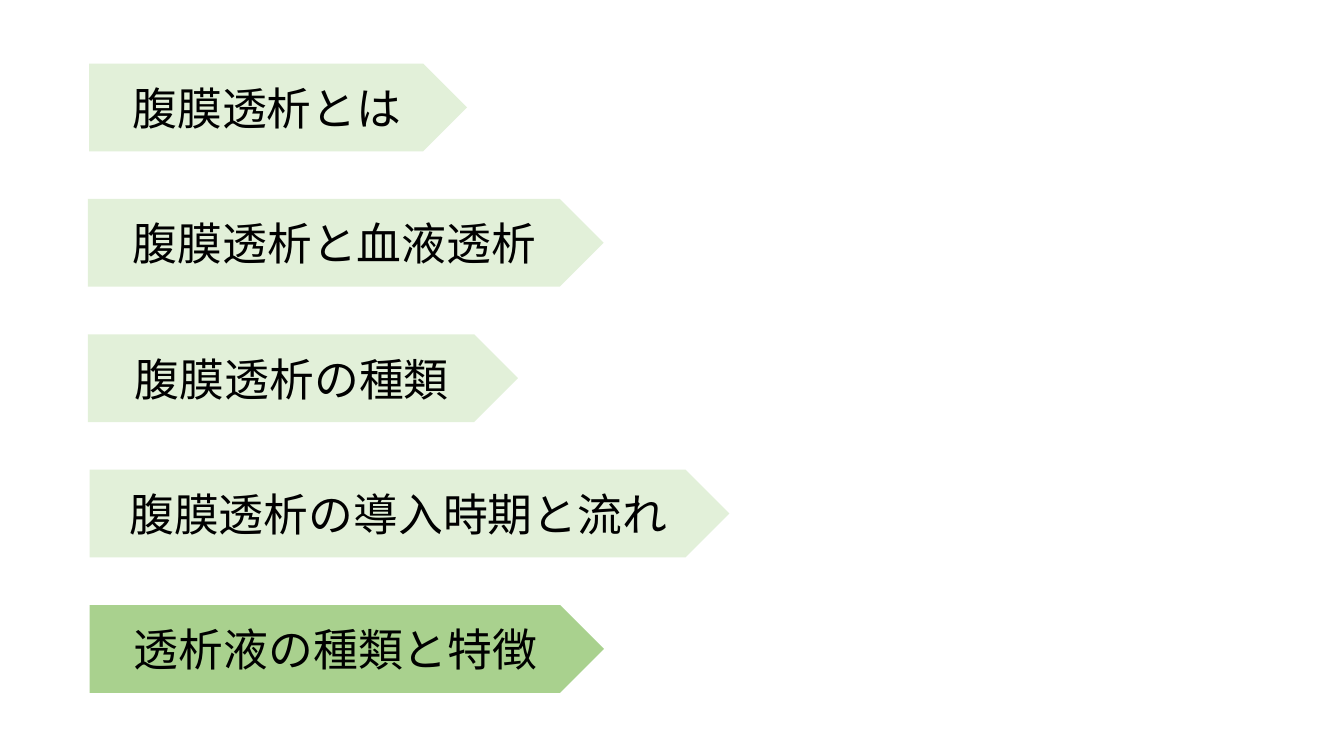
from lxml import etree
from pptx import Presentation
from pptx.dml.color import RGBColor
from pptx.enum.shapes import MSO_SHAPE
from pptx.enum.text import MSO_ANCHOR, PP_ALIGN
from pptx.oxml.ns import qn
from pptx.util import Pt

PENTAGON = MSO_SHAPE.PENTAGON
MIDDLE = MSO_ANCHOR.MIDDLE
CENTER = PP_ALIGN.CENTER

PALE_GREEN = "E2F0D9"
GREEN = "A9D18E"
FIRST_TOP = 45.4
STEP = 96.7
BANNER_HEIGHT = 62.7

# text, left, width, fill
TOPICS = [
    ("腹膜透析とは", 63.6, 270, PALE_GREEN),
    ("腹膜透析と血液透析", 62.8, 368.4, PALE_GREEN),
    ("腹膜透析の種類", 62.8, 307.2, PALE_GREEN),
    ("腹膜透析の導入時期と流れ", 64, 457, PALE_GREEN),
    ("透析液の種類と特徴", 64, 367.4, GREEN),
]


def color(value):
    return RGBColor.from_string(value)


class AgendaSlide:
    """Holds the text style and the slide being built."""

    font_name = "Noto Sans CJK JP"
    font_format = {"size": Pt(32), "name": font_name}
    text_color = "000000"

    def __init__(self, page):
        self.page = page

    def banner(self, text, left, top, width, height, fill):
        box = self.page.shapes.add_shape(
            PENTAGON, Pt(left), Pt(top), Pt(width), Pt(height))
        box.shadow.inherit = False
        box.fill.solid()
        box.fill.fore_color.rgb = color(fill)
        box.line.fill.background()
        box.text_frame.vertical_anchor = MIDDLE
        para = box.text_frame.paragraphs[0]
        para.alignment = CENTER
        self.span(para, text)

    def span(self, para, text):
        """Add a styled run, with the font set for Japanese text too."""
        span = para.add_run()
        span.text = text
        span.font.color.rgb = color(self.text_color)
        for key, value in self.font_format.items():
            setattr(span.font, key, value)
        east_asian = etree.SubElement(span.font._element, qn("a:ea"))
        east_asian.set("typeface", self.font_name)


def main():
    deck = Presentation()
    deck.slide_width = Pt(960)
    deck.slide_height = Pt(540)
    agenda = AgendaSlide(deck.slides.add_slide(deck.slide_layouts[6]))
    for index, (text, left, width, fill) in enumerate(TOPICS):
        top = FIRST_TOP + index * STEP
        agenda.banner(text, left, top, width, BANNER_HEIGHT, fill)
    deck.save("out.pptx")


if __name__ == "__main__":
    main()
